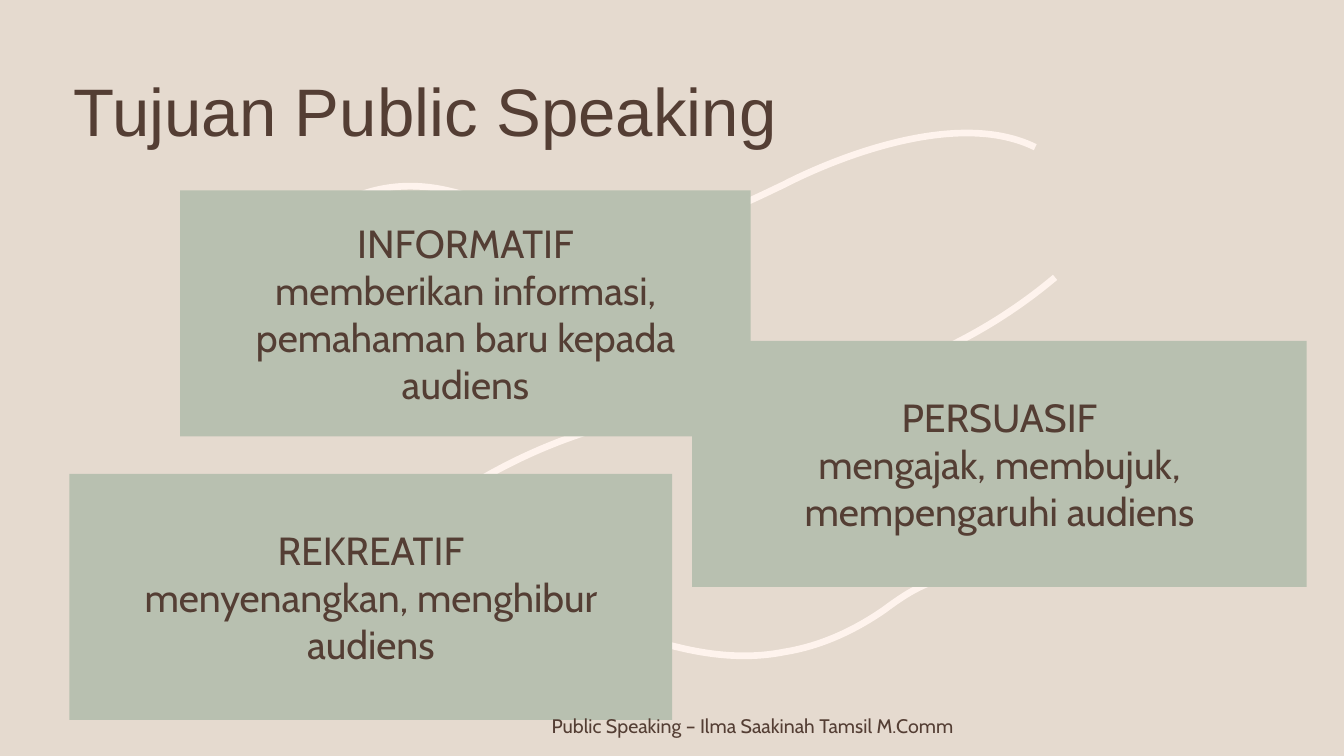
"""Build the slide on the three purposes of public speaking."""
from pptx import Presentation
from pptx.dml.color import RGBColor
from pptx.enum.text import MSO_ANCHOR, MSO_AUTO_SIZE, PP_ALIGN
from pptx.oxml.ns import qn
from pptx.oxml.xmlchemy import OxmlElement
from pptx.util import Cm, Pt

MIDDLE = MSO_ANCHOR.MIDDLE
NO_FIT = MSO_AUTO_SIZE.NONE
LEFT, CENTER = PP_ALIGN.LEFT, PP_ALIGN.CENTER
COLORS = {"sand": "E5DACF", "cream": "FEF3ED", "sage": "B8C0B0", "brown": "543E34"}


def color(name):
    return RGBColor.from_string(COLORS[name])


def style_font(para, name, size):
    for span in para.runs:
        span.font.name = name
        span.font.size = Pt(size)
        span.font.bold = False
        span.font.color.rgb = color("brown")


deck = Presentation()
deck.slide_width, deck.slide_height = Cm(33.87), Cm(19.05)
page = deck.slides.add_slide(deck.slide_layouts[4])
page.background.fill.solid()
page.background.fill.fore_color.rgb = color("sand")

title = page.shapes.title
title.left, title.top, title.width, title.height = Cm(1.6), Cm(1.96), Cm(25.4), Cm(1.88)
title.text_frame.text = "Tujuan Public Speaking"
title.text_frame.auto_size = NO_FIT
title.text_frame.vertical_anchor = MIDDLE
heading = title.text_frame.paragraphs[0]
heading.alignment = LEFT
heading.line_spacing = 0.9
style_font(heading, "Arial", 48)

curves = [
    [(21.16, 9.73), (23.19, 9.22), (25.02, 8.31), (26.59, 6.99)],
    [(14.83, 10.87), (12.93, 11.48), (11.3, 12.45), (9.88, 13.69)],
    [(7.8, 5.66), (8.89, 4.75), (10.11, 4.5), (11.4, 4.83),
     (11.84, 4.93), (12.22, 5.11), (12.62, 5.31),
     (13.46, 5.69), (14.35, 5.97), (15.34, 5.99),
     (16.18, 5.99), (17.02, 5.82), (17.81, 5.51),
     (18.72, 5.16), (19.23, 4.9), (19.76, 4.65),
     (20.35, 4.34), (23.88, 2.62), (26.09, 3.71)],
    [(23.37, 14.71), (22.96, 14.88), (22.63, 15.11), (22.28, 15.37),
     (21.54, 15.88), (20.7, 16.28), (19.76, 16.43),
     (18.95, 16.59), (18.14, 16.54), (17.3, 16.36),
     (16.38, 16.15), (15.85, 15.98), (15.29, 15.8),
     (14.68, 15.62), (11.02, 14.48), (8.81, 16.15)],
]
for points in curves:
    start, *vertices = [(Cm(x), Cm(y)) for x, y in points]
    builder = page.shapes.build_freeform(*start)
    builder.add_line_segments(vertices, close=False)
    curve = builder.convert_to_shape()
    lines = list(curve.element.iter(qn("a:lnTo")))
    for first in range(0, len(lines), 3):
        bezier = OxmlElement("a:cubicBezTo")
        lines[first].addprevious(bezier)
        for line in lines[first:first + 3]:
            bezier.append(line[0])
            line.getparent().remove(line)
    curve.shadow.inherit = False
    curve.fill.background()
    curve.line.color.rgb = color("cream")
    curve.line.width = Pt(4.75)
    title.element.addprevious(curve.element)

purposes = [
    (1, 4.54, 4.8, 14.38, "INFORMATIF", "memberikan informasi, pemahaman baru kepada audiens"),
    (2, 17.44, 8.59, 15.49, "PERSUASIF", "mengajak, membujuk, mempengaruhi audiens"),
    (3, 1.75, 11.94, 15.19, "REKREATIF", "menyenangkan, menghibur audiens"),
]
bodies = {body.placeholder_format.idx: body for body in page.placeholders}
for index, left, top, width, purpose, meaning in purposes:
    box = bodies[index]
    box.left, box.top, box.width, box.height = Cm(left), Cm(top), Cm(width), Cm(6.2)
    box.fill.solid()
    box.fill.fore_color.rgb = color("sage")
    frame = box.text_frame
    frame.text = f"{purpose}\n{meaning}"
    frame.auto_size = NO_FIT
    frame.vertical_anchor = MIDDLE
    frame.margin_left = frame.margin_right = Cm(1)
    for level, para in enumerate(frame.paragraphs):
        para.level = level
        para.alignment = CENTER
        para.space_before = Pt(0)
        properties = para._p.get_or_add_pPr()
        properties.set("marL", "0")
        properties.set("indent", "0")
        properties.append(OxmlElement("a:buNone"))
        style_font(para, "Cabin", 28)
spare = bodies[4].element
spare.getparent().remove(spare)

footer = page.shapes.add_textbox(Cm(13.65), Cm(17.87), Cm(16.94), Cm(0.86))
footer.text_frame.word_wrap = True
footer.text_frame.text = "Public Speaking – Ilma Saakinah Tamsil M.Comm"
style_font(footer.text_frame.paragraphs[0], "Cabin", 14)

deck.save("out.pptx")
